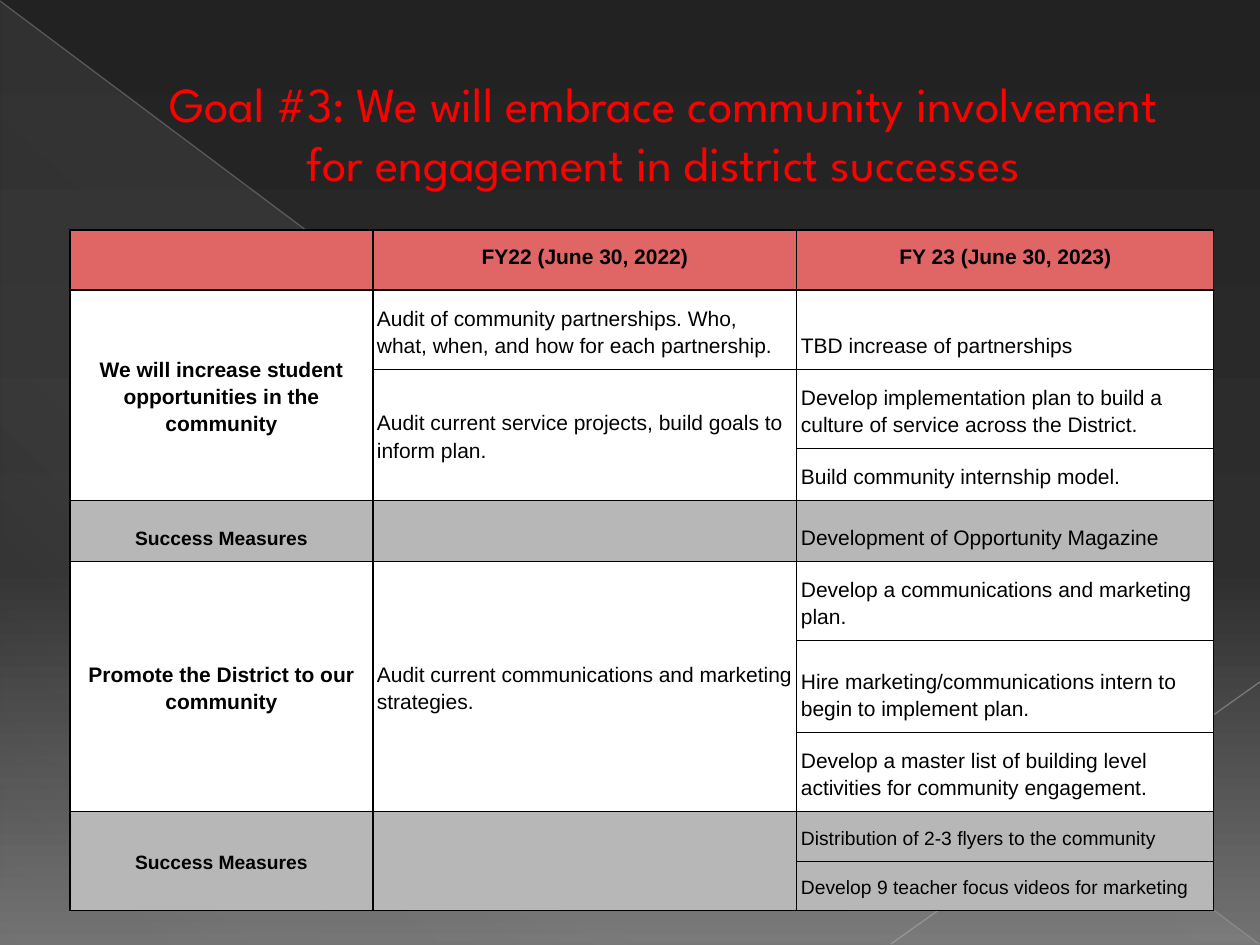
from lxml import etree
from pptx import Presentation
from pptx.dml.color import RGBColor
from pptx.enum.shapes import MSO_CONNECTOR, MSO_SHAPE
from pptx.enum.text import MSO_ANCHOR, MSO_AUTO_SIZE, PP_ALIGN
from pptx.oxml.ns import qn
from pptx.util import Pt

PX = 914400 // 126
STRAIGHT = MSO_CONNECTOR.STRAIGHT
TRIANGLE = MSO_SHAPE.RIGHT_TRIANGLE
TOP, MIDDLE, BOTTOM = MSO_ANCHOR.TOP, MSO_ANCHOR.MIDDLE, MSO_ANCHOR.BOTTOM
LEFT, CENTER = PP_ALIGN.LEFT, PP_ALIGN.CENTER

BLACK = RGBColor(0x00, 0x00, 0x00)
WHITE = RGBColor(0xFF, 0xFF, 0xFF)
RED = RGBColor(0xFF, 0x00, 0x00)
CORAL = RGBColor(0xE0, 0x66, 0x66)
GRAY = RGBColor(0xB7, 0xB7, 0xB7)
DARK = RGBColor(0x22, 0x22, 0x22)
CHARCOAL = RGBColor(0x2E, 0x2E, 0x2E)
ASH = RGBColor(0x72, 0x72, 0x72)
MIST = RGBColor(0xDE, 0xDE, 0xE0)
LINE_A = RGBColor(0xB4, 0xB4, 0xB4)
LINE_B = RGBColor(0xBC, 0xBC, 0xBC)


def add_color(parent, color, alpha=100):
    clr = etree.SubElement(parent, qn("a:srgbClr"), val=str(color))
    if alpha < 100:
        etree.SubElement(clr, qn("a:alpha"), val=str(alpha * 1000))


def set_gradient(fill, el, stops, angle):
    fill.gradient()
    grad = el.find(".//" + qn("a:gradFill"))
    for child in list(grad):
        grad.remove(child)
    lst = etree.SubElement(grad, qn("a:gsLst"))
    for pos, color, alpha in stops:
        gs = etree.SubElement(lst, qn("a:gs"), pos=str(pos * 1000))
        add_color(gs, color, alpha)
    etree.SubElement(grad, qn("a:lin"), ang=str(angle * 60000), scaled="0")


prs = Presentation()
prs.slide_width, prs.slide_height = 1260 * PX, 945 * PX
s = prs.slides.add_slide(prs.slide_layouts[5])
set_gradient(s.background.fill, s.element,
             [(0, DARK, 100), (60, CHARCOAL, 100), (100, ASH, 100)], 90)

sp = s.shapes.add_shape(TRIANGLE, 1 * PX, 2 * PX, 1258 * PX, 942 * PX)
sp.shadow.inherit = False
sp.line.fill.background()
set_gradient(sp.fill, sp.element, [(0, MIST, 9), (70, MIST, 7), (100, MIST, 0)], 133)

for x1, y1, x2, y2, color, alpha in [
    (0, 1, 1259, 944, LINE_A, 34),
    (1260, 682, 891, 944, LINE_B, 44),
]:
    line = s.shapes.add_connector(STRAIGHT, x1 * PX, y1 * PX, x2 * PX, y2 * PX)
    line.line.width = Pt(0.75)
    line.line.color.rgb = color
    clr = line.element.spPr.find(".//" + qn("a:srgbClr"))
    etree.SubElement(clr, qn("a:alpha"), val=str(alpha * 1000))
    etree.SubElement(line.element.spPr, qn("a:effectLst"))

title = s.shapes.title
s.shapes.element.append(title.element)
title.left, title.top, title.width, title.height = 63 * PX, 36 * PX, 1134 * PX, 193 * PX
tf = title.text_frame
for name, value in {"word_wrap": True, "auto_size": MSO_AUTO_SIZE.NONE,
                    "vertical_anchor": MIDDLE}.items():
    setattr(tf, name, value)
p = tf.paragraphs[0]
p.alignment = CENTER
p._p.get_or_add_pPr().set("marL", str(67 * PX))
p._p.get_or_add_pPr().set("indent", "0")
r = p.add_run()
r.text = "Goal #3: We will embrace community involvement for engagement in district successes"
r.font.name, r.font.size = "League Spartan", Pt(27.9)
r.font.color.rgb = RED

COLS = [303, 424, 417]
ROWS = [60, 80, 79, 52, 61, 79, 92, 79, 50, 49]
FILLS = [CORAL] + [WHITE] * 3 + [GRAY] + [WHITE] * 3 + [GRAY] * 2
STYLES = {
    "header": (CENTER, TOP, 12, True),
    "goal": (CENTER, MIDDLE, 12, True),
    "measure": (CENTER, BOTTOM, 11, True),
    "measure_mid": (CENTER, MIDDLE, 11, True),
    "action": (LEFT, BOTTOM, 12, False),
    "action_mid": (LEFT, MIDDLE, 12, False),
    "small": (LEFT, BOTTOM, 11, False),
}
CELLS = [
    (0, 1, "header", "FY22 (June 30, 2022)"),
    (0, 2, "header", "FY 23 (June 30, 2023)"),
    (1, 0, "goal", "We will increase student opportunities in the community"),
    (1, 1, "action", "Audit of community partnerships. Who, what, when, and how for each partnership."),
    (1, 2, "action", "TBD increase of partnerships"),
    (2, 1, "action_mid", "Audit current service projects, build goals to inform plan."),
    (2, 2, "action", "Develop implementation plan to build a culture of service across the District."),
    (3, 2, "action", "Build community internship model."),
    (4, 0, "measure", "Success Measures"),
    (4, 2, "action", "Development of Opportunity Magazine"),
    (5, 0, "goal", "Promote the District to our community"),
    (5, 1, "action_mid", "Audit current communications and marketing strategies."),
    (5, 2, "action", "Develop a communications and marketing plan."),
    (6, 2, "action", "Hire marketing/communications intern to begin to implement plan."),
    (7, 2, "action", "Develop a master list of building level activities for community engagement."),
    (8, 0, "measure_mid", "Success Measures"),
    (8, 2, "small", "Distribution of 2-3 flyers to the community"),
    (9, 2, "small", "Develop 9 teacher focus videos for marketing"),
]
MERGES = [(1, 0, 3), (2, 1, 3), (5, 0, 7), (5, 1, 7), (8, 0, 9), (8, 1, 9)]

table = s.shapes.add_table(len(ROWS), len(COLS), 70 * PX, 230 * PX,
                           sum(COLS) * PX, sum(ROWS) * PX).table
table.first_row = table.horz_banding = False
for col, width in zip(table.columns, COLS):
    col.width = width * PX
for row, height, color in zip(table.rows, ROWS, FILLS):
    row.height = height * PX
    for cell in row.cells:
        for name, value in {"margin_left": 4, "margin_right": 4,
                            "margin_top": 12, "margin_bottom": 12}.items():
            setattr(cell, name, value * PX)
        tcPr = cell._tc.get_or_add_tcPr()
        for side in ("a:lnL", "a:lnR", "a:lnT", "a:lnB"):
            ln = etree.SubElement(tcPr, qn(side), w=str(Pt(0.75)))
            add_color(etree.SubElement(ln, qn("a:solidFill")), BLACK)
        cell.fill.solid()
        cell.fill.fore_color.rgb = color
        cell.text_frame.paragraphs[0]._p.get_or_add_endParaRPr().set("sz", "1100")

for top, col, bottom in MERGES:
    table.cell(top, col).merge(table.cell(bottom, col))

for row, col, style, text in CELLS:
    align, anchor, size, bold = STYLES[style]
    cell = table.cell(row, col)
    cell.vertical_anchor = anchor
    p = cell.text_frame.paragraphs[0]
    p.alignment, p.line_spacing = align, 1.15
    r = p.add_run()
    r.text = text
    for name, value in {"name": "Arial", "size": Pt(size), "bold": bold}.items():
        setattr(r.font, name, value)
    r.font.color.rgb = BLACK

prs.save("out.pptx")
